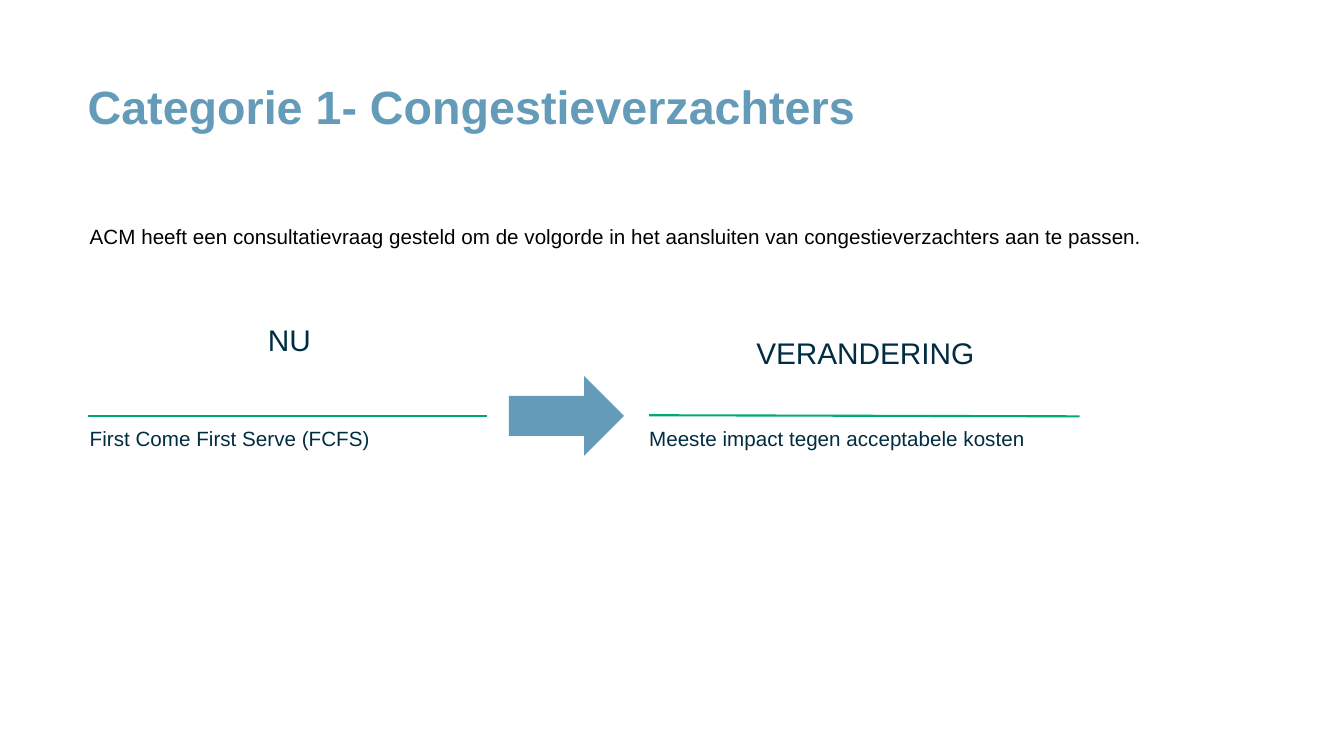
from dataclasses import dataclass

from lxml.etree import SubElement
from pptx import Presentation
from pptx.dml.color import RGBColor
from pptx.enum.shapes import MSO_CONNECTOR as CONNECTOR, MSO_SHAPE as SHAPE
from pptx.enum.text import PP_ALIGN as ALIGN
from pptx.oxml.ns import qn
from pptx.util import Pt


@dataclass(frozen=True)
class Theme:
    """Colours, font and type sizes of the slide."""
    font: str = "Arial"
    blue: RGBColor = RGBColor(0x64, 0x9B, 0xB9)
    navy: RGBColor = RGBColor(0x00, 0x2D, 0x41)
    green: RGBColor = RGBColor(0x00, 0xAA, 0x78)
    black: RGBColor = RGBColor(0, 0, 0)
    title: float = 33.3
    heading: float = 21.3
    body: float = 14.7
    rule: float = 1.5


THEME = Theme()


def add_text(slide, text, box, size, color, spacing=0.9, align=ALIGN.LEFT, bold=False):
    """Add a wrapped text box without margins."""
    tf = slide.shapes.add_textbox(*map(Pt, box)).text_frame
    tf.word_wrap = True
    tf.margin_left = tf.margin_top = tf.margin_right = tf.margin_bottom = 0
    p = tf.paragraphs[0]
    p.text = text
    p.alignment = align
    p.line_spacing = spacing
    p.font.name = THEME.font
    p.font.size = Pt(size)
    p.font.bold = bold
    p.font.color.rgb = color


def add_rule(slide, left, right, start_y, end_y):
    """Add a thin green rule."""
    line = slide.shapes.add_connector(
        CONNECTOR.STRAIGHT, Pt(left), Pt(start_y), Pt(right), Pt(end_y))
    line.line.color.rgb = THEME.green
    line.line.width = Pt(THEME.rule)
    SubElement(line._element.spPr, qn("a:effectLst"))


def add_arrow(slide, box):
    """Add the block arrow between the two situations."""
    sp = slide.shapes.add_shape(SHAPE.RIGHT_ARROW, *map(Pt, box))
    sp.shadow.inherit = False
    sp.fill.solid()
    sp.fill.fore_color.rgb = THEME.blue
    sp.line.fill.background()


def add_situation(slide, heading, heading_box, text, text_box, rule):
    """Add a centred heading, a rule and the text below it."""
    add_text(slide, heading, heading_box, THEME.heading, THEME.navy, align=ALIGN.CENTER)
    add_text(slide, text, text_box, THEME.body, THEME.navy)
    add_rule(slide, *rule)


def main():
    """Build the slide and save it."""
    prs = Presentation()
    prs.slide_width, prs.slide_height = Pt(960), Pt(540)
    slide = prs.slides.add_slide(prs.slide_layouts[6])
    add_text(slide, "Categorie 1- Congestieverzachters", (62.6, 58.3, 756, 75.6),
             THEME.title, THEME.blue, spacing=0.95, bold=True)
    add_text(slide, "ACM heeft een consultatievraag gesteld om de volgorde in het "
             "aansluiten van congestieverzachters aan te passen.",
             (64.1, 158.4, 835.2, 324.7), THEME.body, THEME.black, spacing=1.1)
    add_situation(slide, "NU", (64.1, 232.6, 285.1, 73.4),
                  "First Come First Serve (FCFS)", (64.1, 306, 283.7, 73.4),
                  (62.6, 347.8, 297.4, 297.4))
    add_situation(slide, "VERANDERING", (465.1, 241.9, 306, 73.4),
                  "Meeste impact tegen acceptabele kosten", (463.7, 306, 313.9, 73.4),
                  (463.7, 771.1, 296.6, 297.4))
    add_arrow(slide, (363.6, 268.6, 82.1, 56.9))
    prs.save("out.pptx")


if __name__ == "__main__":
    main()
